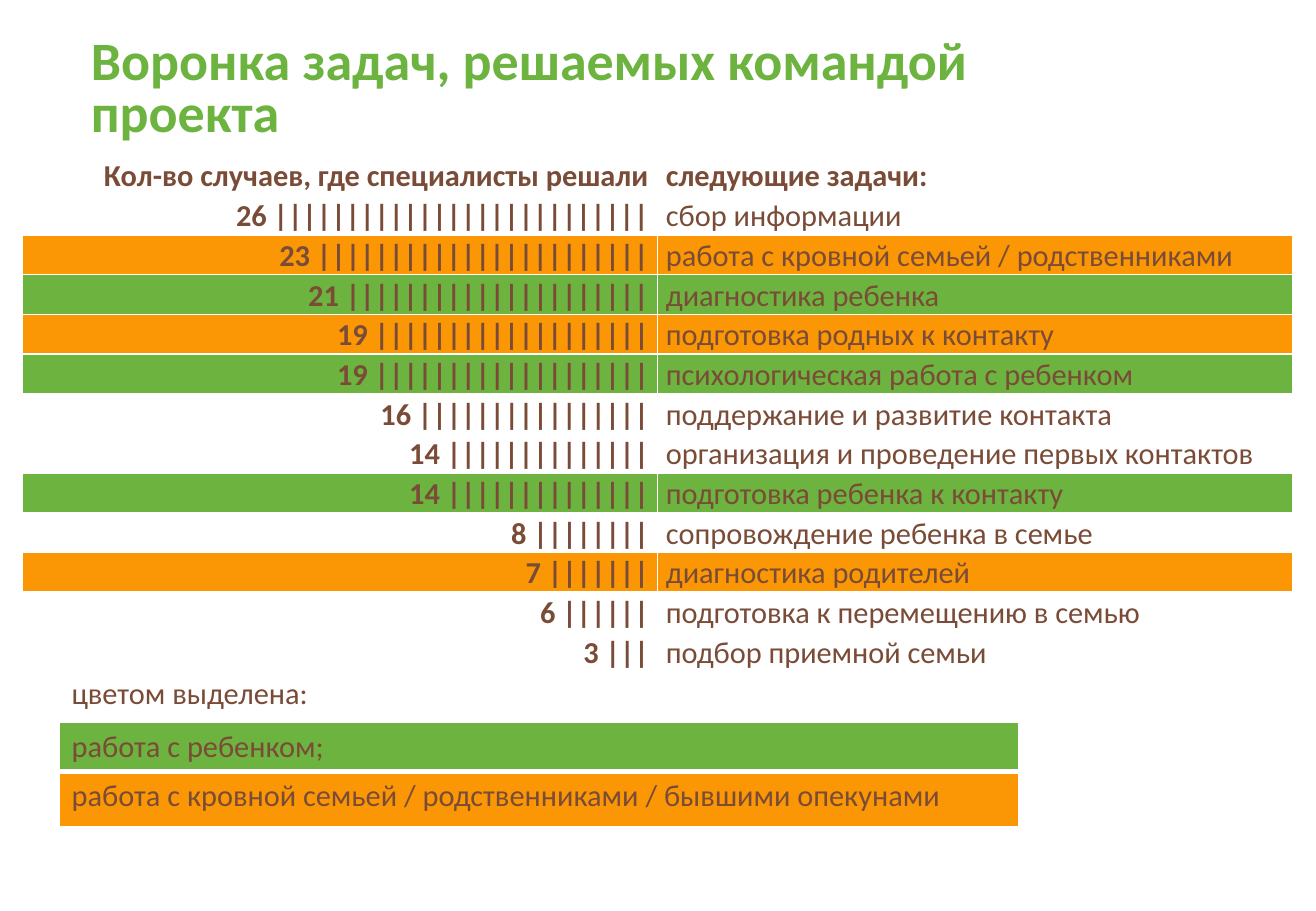
from dataclasses import dataclass
from typing import Any, Optional

import lxml.etree
import pptx
import pptx.dml.color
import pptx.enum.text
import pptx.oxml.ns
import pptx.util

EMU_PER_PX = 9144  # 100 px to the inch

WHITE = pptx.dml.color.RGBColor(0xFF, 0xFF, 0xFF)
BROWN = pptx.dml.color.RGBColor(0x7A, 0x4C, 0x37)
GREEN = pptx.dml.color.RGBColor(0x6C, 0xB3, 0x3F)
ORANGE = pptx.dml.color.RGBColor(0xFB, 0x97, 0x05)

LEFT = pptx.enum.text.PP_ALIGN.LEFT
RIGHT = pptx.enum.text.PP_ALIGN.RIGHT
TOP = pptx.enum.text.MSO_ANCHOR.TOP
MIDDLE = pptx.enum.text.MSO_ANCHOR.MIDDLE
BOTTOM = pptx.enum.text.MSO_ANCHOR.BOTTOM


@dataclass(frozen=True)
class Task:
    count: int
    name: str
    fill: pptx.dml.color.RGBColor = WHITE


@dataclass(frozen=True)
class Cell:
    text: str
    fill: pptx.dml.color.RGBColor
    bold: bool = False
    alignment: Any = LEFT
    anchor: Any = TOP
    bottom_border: int = 1


@dataclass(frozen=True)
class Box:
    left: int
    top: int
    width: int
    height: int


TASKS = [
    Task(26, "сбор информации"),
    Task(23, "работа с кровной семьей / родственниками", ORANGE),
    Task(21, "диагностика ребенка", GREEN),
    Task(19, "подготовка родных к контакту", ORANGE),
    Task(19, "психологическая работа с ребенком", GREEN),
    Task(16, "поддержание и развитие контакта"),
    Task(14, "организация и проведение первых контактов"),
    Task(14, "подготовка ребенка к контакту", GREEN),
    Task(8, "сопровождение ребенка в семье"),
    Task(7, "диагностика родителей", ORANGE),
    Task(6, "подготовка к перемещению в семью"),
    Task(3, "подбор приемной семьи"),
]


def px(length: int) -> pptx.util.Emu:
    return pptx.util.Emu(length * EMU_PER_PX)


def set_attributes(target: Any, values: dict[str, Any]) -> None:
    for name, value in values.items():
        setattr(target, name, value)


def write_text(
    text_frame: Any,
    text: str,
    size: int = 18,
    color: pptx.dml.color.RGBColor = BROWN,
    bold: bool = False,
    alignment: Any = LEFT,
    line_spacing: Optional[float] = None,
) -> None:
    paragraph = text_frame.paragraphs[0]
    set_attributes(paragraph, {"alignment": alignment, "line_spacing": line_spacing})
    run = paragraph.add_run()
    run.text = text
    set_attributes(
        run.font, {"name": "Calibri", "size": pptx.util.Pt(size), "bold": bold}
    )
    run.font.color.rgb = color


def add_text_box(slide: Any, box: Box, text: str, anchor: Any, **text_format: Any) -> None:
    shape = slide.shapes.add_textbox(
        px(box.left), px(box.top), px(box.width), px(box.height)
    )
    set_attributes(shape.text_frame, {"word_wrap": True, "vertical_anchor": anchor})
    write_text(shape.text_frame, text, **text_format)


def add_white_borders(table_cell: Any, bottom_width: int) -> None:
    """Append the four border lines; call before the fill is set."""
    properties = table_cell._tc.get_or_add_tcPr()
    for side, width in {"L": 1, "R": 1, "T": 1, "B": bottom_width}.items():
        line = lxml.etree.SubElement(
            properties,
            pptx.oxml.ns.qn(f"a:ln{side}"),
            {"w": str(pptx.util.Pt(width))},
        )
        fill = lxml.etree.SubElement(line, pptx.oxml.ns.qn("a:solidFill"))
        lxml.etree.SubElement(fill, pptx.oxml.ns.qn("a:srgbClr"), {"val": str(WHITE)})


def add_table(
    slide: Any,
    box: Box,
    rows: list[list[Cell]],
    row_heights: list[int],
    margins: dict[str, int],
    line_spacing: Optional[float] = None,
) -> None:
    table = slide.shapes.add_table(
        len(rows), len(rows[0]), px(box.left), px(box.top), px(box.width), px(box.height)
    ).table
    set_attributes(table, {"first_row": False, "horz_banding": False})
    for row_index, (cells, height) in enumerate(zip(rows, row_heights)):
        table.rows[row_index].height = px(height)
        for column_index, cell in enumerate(cells):
            table_cell = table.cell(row_index, column_index)
            add_white_borders(table_cell, cell.bottom_border)
            table_cell.fill.solid()
            table_cell.fill.fore_color.rgb = cell.fill
            table_cell.vertical_anchor = cell.anchor
            set_attributes(
                table_cell, {name: px(margin) for name, margin in margins.items()}
            )
            write_text(
                table_cell.text_frame,
                cell.text,
                bold=cell.bold,
                alignment=cell.alignment,
                line_spacing=line_spacing,
            )


def funnel_rows() -> list[list[Cell]]:
    header = [
        Cell("Кол-во случаев, где специалисты решали", WHITE, True, RIGHT, bottom_border=3),
        Cell("следующие задачи:", WHITE, True, bottom_border=3),
    ]
    return [header] + [
        [
            Cell(f"{task.count} {'|' * task.count}", task.fill, True, RIGHT),
            Cell(task.name, task.fill, anchor=BOTTOM),
        ]
        for task in TASKS
    ]


def main() -> None:
    presentation = pptx.Presentation()
    set_attributes(presentation, {"slide_width": px(1083), "slide_height": px(750)})
    slide = presentation.slides.add_slide(presentation.slide_layouts[6])

    rows = funnel_rows()
    add_table(
        slide,
        Box(18, 128, 1046, 417),
        rows,
        [32] * len(rows),
        {"margin_left": 7, "margin_right": 7, "margin_top": 0, "margin_bottom": 0},
        line_spacing=1.07,
    )
    add_text_box(
        slide,
        Box(65, 22, 857, 106),
        "Воронка задач, решаемых командой проекта",
        MIDDLE,
        size=32,
        color=GREEN,
        bold=True,
        line_spacing=0.8,
    )
    add_text_box(slide, Box(49, 550, 542, 101), "цветом выделена:", TOP)
    add_table(
        slide,
        Box(49, 595, 789, 83),
        [
            [Cell("работа с ребенком;", GREEN, bottom_border=3)],
            [Cell("работа с кровной семьей / родственниками / бывшими опекунами", ORANGE)],
        ],
        [37, 46],
        {"margin_left": 10, "margin_right": 10, "margin_top": 5, "margin_bottom": 5},
    )
    presentation.save("out.pptx")


if __name__ == "__main__":
    main()
